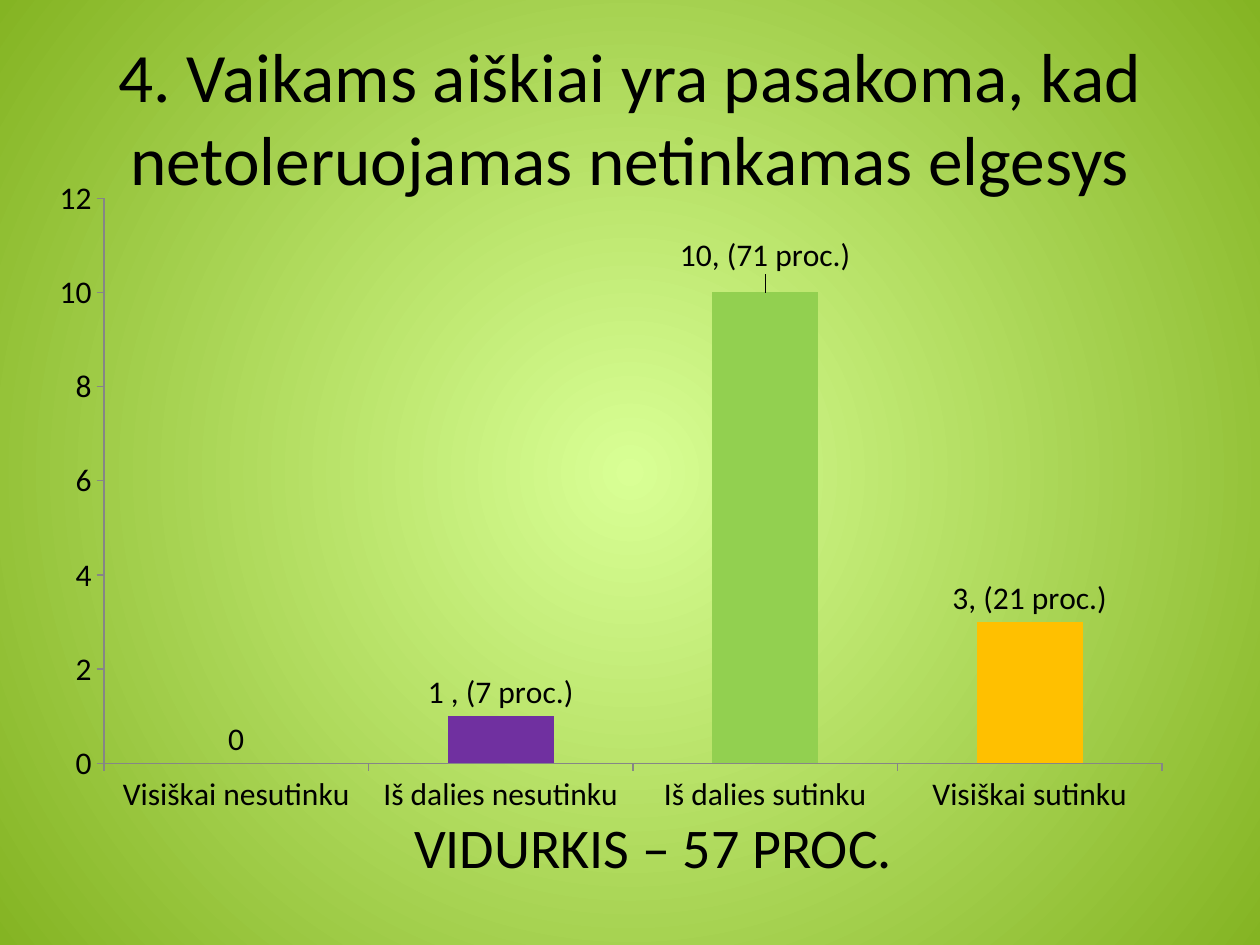
from lxml import etree
from pptx import Presentation, util as u
from pptx.chart.data import CategoryChartData
from pptx.dml.color import RGBColor
from pptx.enum import chart as ch, text
from pptx.oxml import parse_xml
from pptx.oxml.ns import nsdecls, qn

TITLE = "4. Vaikams aiškiai yra pasakoma, kad netoleruojamas netinkamas elgesys"
AVERAGE = "VIDURKIS – 57 PROC."
BARS = [
    ("Visiškai nesutinku", 0, "94C600", None),
    ("Iš dalies nesutinku", 1, "7030A0", "1 , (7 proc.)"),
    ("Iš dalies sutinku", 10, "92D050", "10, (71 proc.)"),
    ("Visiškai sutinku", 3, "FFC000", "3, (21 proc.)"),
]
BACKGROUND = ["D9FF95", "84B423"]
TITLE_BOX = (63, 38, 1134, 157)
CHART_BOX = (35, 165, 1150, 665)
PLOT_BOX = (102, 198, 1060, 568)
AVERAGE_BOX = (113, 806, 1081, 81)
LABEL_SHIFT = {2: -0.02}


def px(n):
    return u.Emu(round(n * 914400 / 126))


def place(box):
    return [px(n) for n in box]


def rgb(c):
    return RGBColor.from_string(c)


def style(font, size):
    for key, value in {"name": "Calibri", "size": u.Pt(size)}.items():
        setattr(font, key, value)
    font.color.rgb = rgb("000000")


def write(tf, words, size):
    for key, value in {"word_wrap": True,
                       "vertical_anchor": text.MSO_ANCHOR.MIDDLE}.items():
        setattr(tf, key, value)
    p = tf.paragraphs[0]
    p.alignment = text.PP_ALIGN.CENTER
    r = p.add_run()
    r.text = words
    style(r.font, size)


def layout(tags):
    inner = "".join(f'<c:{k} val="{v}"/>' for k, v in tags)
    return parse_xml(f'<c:layout {nsdecls("c")}><c:manualLayout>{inner}'
                     '</c:manualLayout></c:layout>')


prs = Presentation()
prs.slide_width, prs.slide_height = px(1260), px(945)
s = prs.slides.add_slide(prs.slide_layouts[5])

fill = s.background.fill
fill.gradient()
for stop, c in zip(fill.gradient_stops, BACKGROUND):
    stop.color.rgb = rgb(c)
grad = next(s.element.iter(qn("a:gradFill")))
grad.remove(grad.find(qn("a:lin")))
circle = etree.SubElement(grad, qn("a:path"), path="circle")
etree.SubElement(circle, qn("a:fillToRect"), dict.fromkeys("ltrb", "50000"))

title = s.shapes.title
title.left, title.top, title.width, title.height = place(TITLE_BOX)
write(title.text_frame, TITLE, 39.6)

data = CategoryChartData()
data.categories = [bar[0] for bar in BARS]
data.add_series("Series 1", [bar[1] for bar in BARS])
chart = s.shapes.add_chart(ch.XL_CHART_TYPE.COLUMN_CLUSTERED,
                           *place(CHART_BOX), data).chart
chart.has_legend = chart.has_title = False
style(chart.font, 18)

for axis in (chart.category_axis, chart.value_axis):
    axis.has_major_gridlines = False
    axis.major_tick_mark = ch.XL_TICK_MARK.OUTSIDE
    axis.format.line.color.rgb = rgb("868686")
for key, value in {"minimum_scale": 0, "maximum_scale": 12, "major_unit": 2}.items():
    setattr(chart.value_axis, key, value)

cx, cy, cw, chh = CHART_BOX
x, y, w, h = PLOT_BOX
area = chart.element.find(".//" + qn("c:plotArea"))
for old in area.findall(qn("c:layout")):
    area.remove(old)
area.insert(0, layout([("layoutTarget", "inner"), ("xMode", "edge"), ("yMode", "edge"),
                       ("x", round((x - cx) / cw, 2)), ("y", round((y - cy) / chh, 2)),
                       ("w", round(w / cw, 2)), ("h", round(h / chh, 2))]))

plot = chart.plots[0]
plot.gap_width, plot.vary_by_categories = 150, False
ser = plot.series[0]
ser.data_labels.show_value = True
ser.data_labels.position = ch.XL_LABEL_POSITION.OUTSIDE_END
style(ser.data_labels.font, 18)
for i, (_, _, c, label) in enumerate(BARS):
    point = ser.points[i]
    point.format.fill.solid()
    point.format.fill.fore_color.rgb = rgb(c)
    if label:
        tf = point.data_label.text_frame
        tf.text = label
        style(tf.paragraphs[0].runs[0].font, 18)
        point.data_label.position = ch.XL_LABEL_POSITION.OUTSIDE_END
for lbl in ser.data_labels._element.findall(qn("c:dLbl")):
    idx = lbl.find(qn("c:idx"))
    shift = LABEL_SHIFT.get(int(idx.get("val")))
    if shift:
        idx.addnext(layout([("x", 0), ("y", shift)]))

average = s.shapes.add_textbox(*place(AVERAGE_BOX))
write(average.text_frame, AVERAGE, 32)

prs.save("out.pptx")
